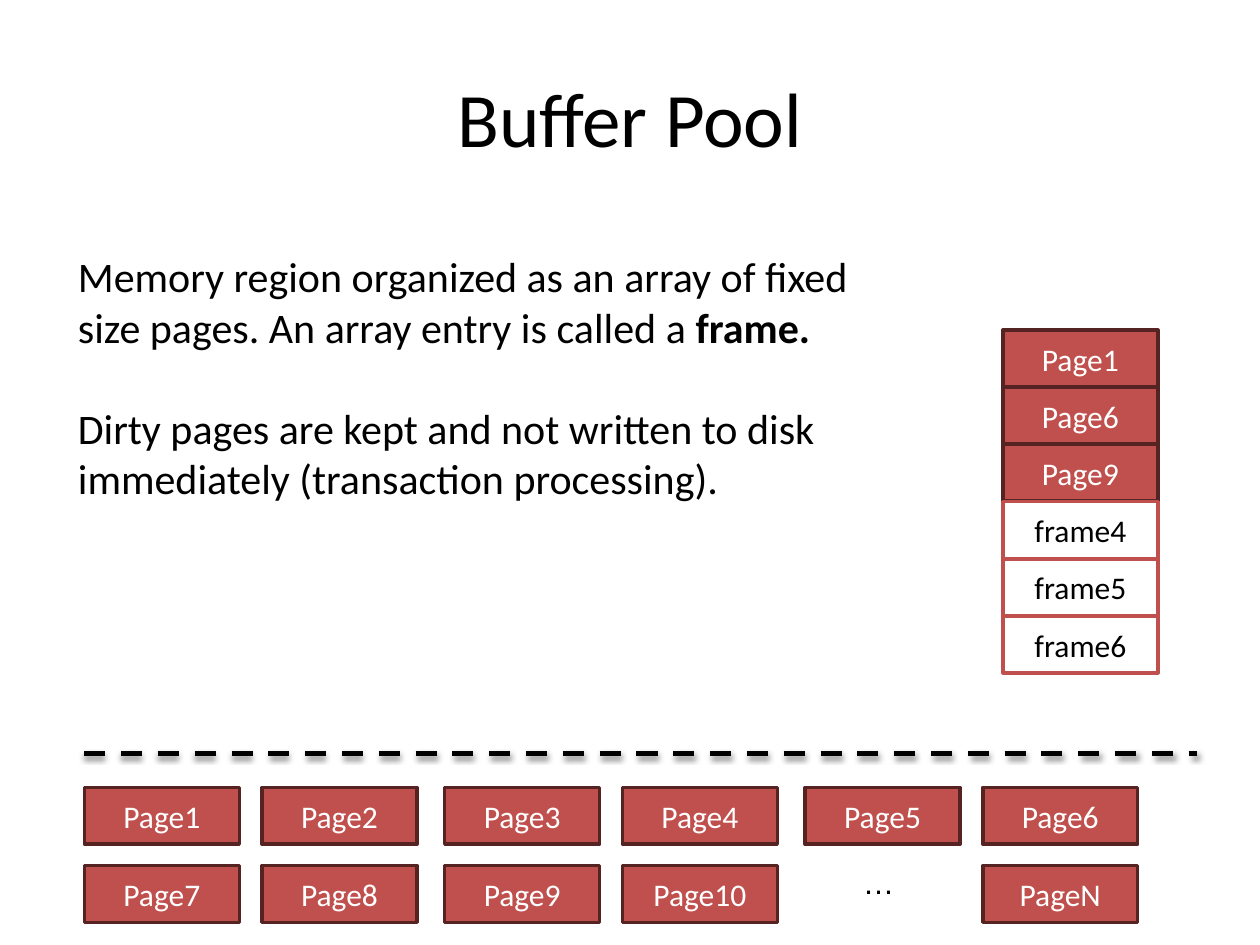
from lxml.etree import SubElement
from pptx import Presentation
from pptx.dml.color import RGBColor
from pptx.enum.dml import MSO_LINE
from pptx.enum.shapes import MSO_CONNECTOR, MSO_SHAPE
from pptx.enum.text import MSO_ANCHOR, MSO_AUTO_SIZE, PP_ALIGN
from pptx.oxml.ns import qn
from pptx.util import Inches, Pt

RED, DARK_RED, WHITE, BLACK = "C0504D", "542322", "FFFFFF", "000000"
BOX_W, BOX_H = 1.23, 0.45
POOL_LEFT, POOL_TOP, FRAME_STEP = 7.96, 2.62, 0.454
DISK_LEFT, DISK_TOP, ROW_STEP = 0.67, 6.25, 0.62
PAIR_STEP, COL_STEP = 2.86, 1.41  # disk pages stand in pairs

POOL_PAGES = ["Page1", "Page6", "Page9"]
FREE_FRAMES = ["frame4", "frame5", "frame6"]
DISK_PAGES = [
    ["Page1", "Page2", "Page3", "Page4", "Page5", "Page6"],
    ["Page7", "Page8", "Page9", "Page10", None, "PageN"],
]
BODY = [
    [("Memory region organized as an array of fixed size pages. "
      "An array entry is called a ", False), ("frame.", True)],
    [("Dirty pages are kept and not written to disk immediately "
      "(transaction processing).", False)],
]


def rgb(color):
    return RGBColor.from_string(color)


def set_font(p, size, color=BLACK, name="Calibri"):
    p.font.size = Pt(size)
    p.font.name = name
    p.font.color.rgb = rgb(color)


def add_title(s, text):
    title = s.shapes.title
    title.left, title.top = Inches(0.5), Inches(0.3)
    title.width, title.height = Inches(9), Inches(1.25)
    tf = title.text_frame
    tf.text = text
    tf.vertical_anchor = MSO_ANCHOR.MIDDLE
    p = tf.paragraphs[0]
    p.alignment = PP_ALIGN.CENTER
    set_font(p, 44)


def add_text(s, left, top, width, height, paragraphs, size,
             name="Calibri", wrap=True):
    box = s.shapes.add_textbox(*map(Inches, (left, top, width, height)))
    tf = box.text_frame
    tf.word_wrap = wrap
    tf.auto_size = MSO_AUTO_SIZE.SHAPE_TO_FIT_TEXT
    for i, runs in enumerate(paragraphs):
        p = tf.add_paragraph() if i else tf.paragraphs[0]
        p.space_before = Pt(29 if i else 0)
        set_font(p, size, name=name)
        for text, bold in runs:
            r = p.add_run()
            r.text = text
            r.font.bold = bold


def add_box(s, left, top, text, fill=RED, line=DARK_RED, color=WHITE):
    box = s.shapes.add_shape(
        MSO_SHAPE.RECTANGLE, *map(Inches, (left, top, BOX_W, BOX_H)))
    box.shadow.inherit = False
    box.fill.solid()
    box.fill.fore_color.rgb = rgb(fill)
    box.line.color.rgb = rgb(line)
    box.line.width = Pt(2)
    tf = box.text_frame
    tf.text = text
    tf.vertical_anchor = MSO_ANCHOR.MIDDLE
    p = tf.paragraphs[0]
    p.alignment = PP_ALIGN.CENTER
    set_font(p, 18, color)


def add_divider(s, left, right, y):
    line = s.shapes.add_connector(
        MSO_CONNECTOR.STRAIGHT, *map(Inches, (left, y, right, y)))
    line.line.color.rgb = rgb(BLACK)
    line.line.width = Pt(3)
    line.line.dash_style = MSO_LINE.DASH
    # Soft shadow below the line
    effects = SubElement(line._element.spPr, qn("a:effectLst"))
    shadow = SubElement(effects, qn("a:outerShdw"), blurRad=str(Pt(3.1)),
                        dist=str(Pt(1.6)), dir="5400000", rotWithShape="0")
    shade = SubElement(shadow, qn("a:srgbClr"), val=BLACK)
    SubElement(shade, qn("a:alpha"), val="38000")


def main():
    prs = Presentation()
    prs.slide_width, prs.slide_height = Inches(10), Inches(7.5)
    s = prs.slides.add_slide(prs.slide_layouts[5])
    add_title(s, "Buffer Pool")
    add_text(s, 0.52, 1.94, 6.74, 2.12, BODY, 24)

    # Buffer pool: used frames, then free ones
    for i, text in enumerate(POOL_PAGES + FREE_FRAMES):
        colors = () if text in POOL_PAGES else (WHITE, RED, BLACK)
        add_box(s, POOL_LEFT, POOL_TOP + i * FRAME_STEP, text, *colors)

    # Pages on disk, below the divider
    add_divider(s, DISK_LEFT, 9.5, 5.98)
    for row, pages in enumerate(DISK_PAGES):
        for col, text in enumerate(pages):
            if text:
                left = DISK_LEFT + col // 2 * PAIR_STEP + col % 2 * COL_STEP
                add_box(s, left, DISK_TOP + row * ROW_STEP, text)
    add_text(s, 6.75, 6.8, 0.45, 0.4, [[("…", False)]], 18, "Arial", wrap=False)

    prs.save("out.pptx")


if __name__ == "__main__":
    main()
